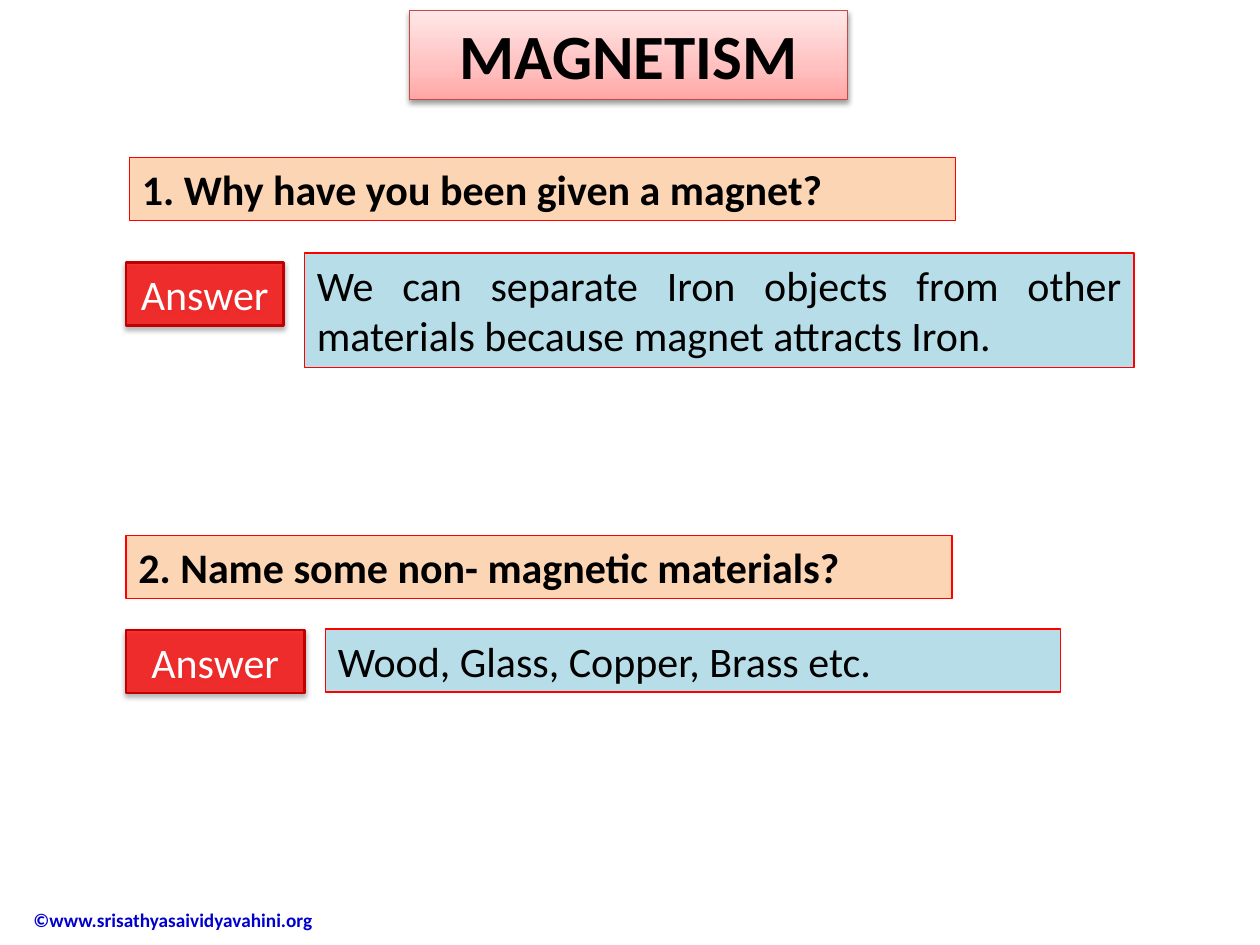
from copy import deepcopy
from lxml import etree
from pptx import Presentation
from pptx.dml.color import RGBColor
from pptx.enum import shapes, text
from pptx.oxml import ns
from pptx.util import Pt

BLACK = RGBColor(0, 0, 0)
WHITE = RGBColor(255, 255, 255)
RED = RGBColor(255, 0, 0)
DARK = RGBColor(0xC0, 0, 0)
PEACH = RGBColor(0xFC, 0xD5, 0xB5)
AQUA = RGBColor(0xB7, 0xDE, 0xE8)
BLUE = RGBColor(0, 0, 0xCC)
ROSE = RGBColor(0xBF, 0x4C, 0x48)
FADE = [(0, RGBColor(0xFF, 0xA6, 0xA5)), (0.35, RGBColor(0xFF, 0xC0, 0xBF)),
        (1, RGBColor(0xFF, 0xE7, 0xE7))]
LEFT, JUST, MID = (text.PP_ALIGN.LEFT, text.PP_ALIGN.JUSTIFY,
                   text.PP_ALIGN.CENTER)


def place(shape, box):
    for name, val in zip(("left", "top", "width", "height"), box):
        setattr(shape, name, Pt(val))


def write(shape, words, align=LEFT, indent=None, anchor=text.MSO_ANCHOR.TOP,
          **font):
    frame = shape.text_frame
    frame.word_wrap = True
    frame.auto_size = text.MSO_AUTO_SIZE.NONE
    frame.vertical_anchor = anchor
    para = frame.paragraphs[0]
    para.text = words
    para.alignment = align
    if indent:
        props = para._p.get_or_add_pPr()
        for key, val in zip(("marL", "indent"), indent):
            props.set(key, str(Pt(val)))
    style = {"name": "Calibri", "size": Pt(24), "bold": False, **font}
    color = style.pop("color", BLACK)
    for key, val in style.items():
        setattr(para.font, key, val)
    para.font.color.rgb = color


def edge(shape, color, width=0.75):
    shape.line.color.rgb = color
    shape.line.width = Pt(width)


def shade(shape, dist, alpha):
    """Give the shape a soft shadow straight below it."""
    shape.shadow.inherit = False
    effect = shape._element.spPr.find(ns.qn("a:effectLst"))
    outer = etree.SubElement(effect, ns.qn("a:outerShdw"), blurRad=str(Pt(3.1)),
                             dist=str(Pt(dist)), dir="5400000", rotWithShape="0")
    tone = etree.SubElement(outer, ns.qn("a:srgbClr"), val="000000")
    etree.SubElement(tone, ns.qn("a:alpha"), val=str(alpha * 1000))


def panel(slide, box, fill, line, width=0.75):
    shape = slide.shapes.add_shape(shapes.MSO_SHAPE.RECTANGLE,
                                   *(Pt(val) for val in box))
    shape.shadow.inherit = False
    shape.fill.solid()
    shape.fill.fore_color.rgb = fill
    edge(shape, line, width)
    return shape


def heading(slide, box, words):
    title = slide.shapes.title
    place(title, box)
    title.fill.gradient()
    title.fill.gradient_angle = 90
    stops = title._element.spPr.find(".//" + ns.qn("a:gsLst"))
    stops.append(deepcopy(stops[-1]))
    for stop, (pos, color) in zip(title.fill.gradient_stops, FADE):
        stop.position = pos
        stop.color.rgb = color
    edge(title, ROSE)
    shade(title, 1.6, 38)
    write(title, words, MID, size=Pt(36), bold=True)


def question(slide, box, words):
    write(panel(slide, box, PEACH, RED), words, indent=(36, -36), bold=True)


def answer(slide, tag, box, words, align):
    # Answer text
    write(panel(slide, box, AQUA, RED), words, align)
    # Red label, partly see-through
    label = panel(slide, tag, RED, DARK, 1.5)
    tone = label._element.spPr.find(ns.qn("a:solidFill"))[0]
    etree.SubElement(tone, ns.qn("a:alpha"), val="76000")
    shade(label, 1.8, 35)
    write(label, "Answer", MID, color=WHITE)


def footer(slide, box, words):
    note = slide.shapes.add_textbox(*(Pt(val) for val in box))
    write(note, words, indent=(36, 0), anchor=text.MSO_ANCHOR.MIDDLE,
          size=Pt(11), bold=True, color=BLUE)


def main():
    deck = Presentation()
    deck.slide_width, deck.slide_height = Pt(720), Pt(540)
    slide = deck.slides.add_slide(deck.slide_layouts[5])

    footer(slide, (-24, 511, 217.5, 29.5), "©www.srisathyasaividyavahini.org")
    heading(slide, (234, 6, 250.5, 51), "MAGNETISM")

    # First question
    question(slide, (74, 90, 472, 36), "1. Why have you been given a magnet?")
    answer(slide, (72, 150, 90, 36), (174, 144.5, 474, 65.5),
           "We can separate Iron objects from other materials because "
           "magnet attracts Iron.", JUST)

    # Second question
    question(slide, (72, 306, 472, 36), "2. Name some non- magnetic materials?")
    answer(slide, (72, 360, 102, 36), (186, 359.5, 420, 36),
           "Wood, Glass, Copper, Brass etc.", LEFT)

    deck.save("out.pptx")


if __name__ == "__main__":
    main()
